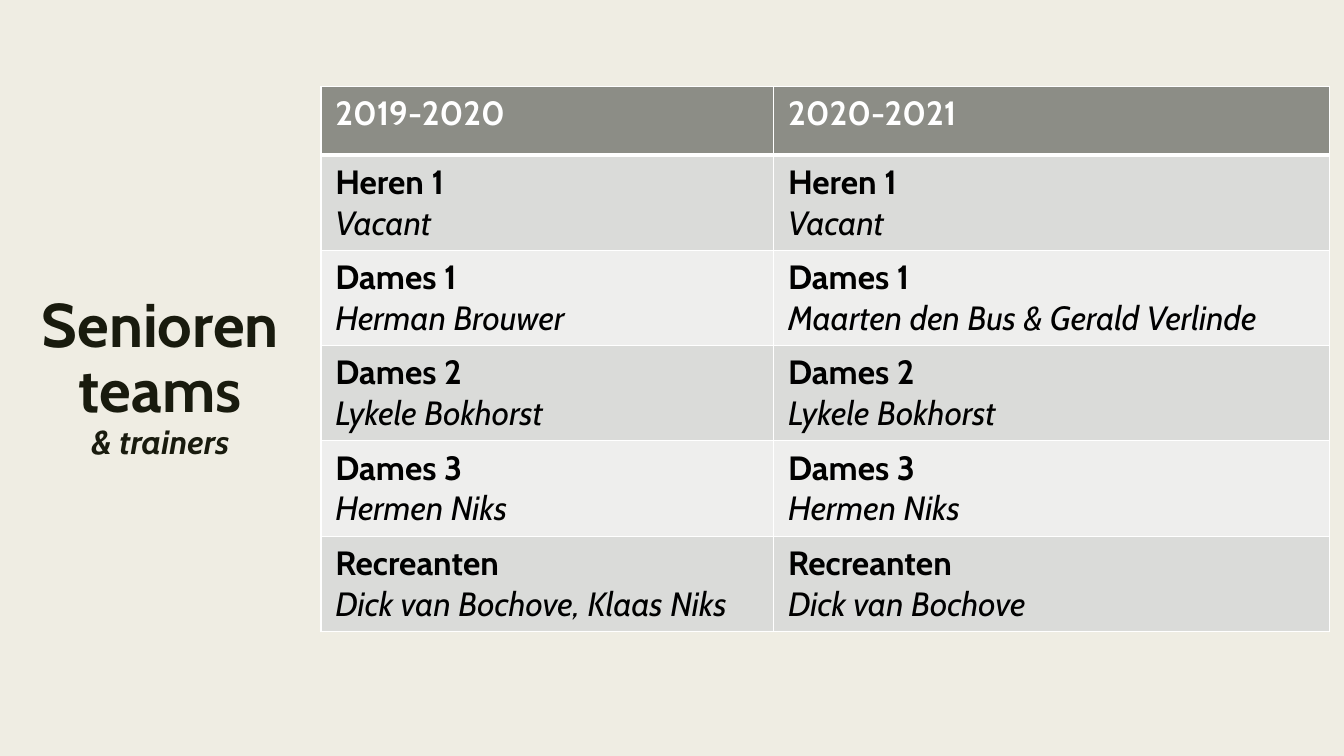
from lxml.etree import SubElement
from pptx import Presentation
from pptx.dml.color import RGBColor
from pptx.enum.shapes import MSO_SHAPE
from pptx.enum.text import MSO_ANCHOR, MSO_AUTO_SIZE, PP_ALIGN
from pptx.oxml.ns import qn
from pptx.util import Cm, Pt

COLORS = {
    "background": "EFEDE3",
    "title": "191B0E",
    "header": "8C8D86",
    "dark band": "DADBD9",
    "light band": "EEEEED",
    "white": "FFFFFF",
    "black": "000000",
}
SEASONS = ["2019-2020", "2020-2021"]
TEAMS = [
    ("Heren 1", "Vacant", "Vacant"),
    ("Dames 1", "Herman Brouwer", "Maarten den Bus & Gerald Verlinde"),
    ("Dames 2", "Lykele Bokhorst", "Lykele Bokhorst"),
    ("Dames 3", "Hermen Niks", "Hermen Niks"),
    ("Recreanten", "Dick van Bochove, Klaas Niks", "Dick van Bochove"),
]


def write(paragraph, text, size=24, color="black", bold=False, italic=False,
          align=PP_ALIGN.LEFT, spacing=1.0):
    paragraph.alignment = align
    paragraph.line_spacing = spacing
    run = paragraph.add_run()
    run.text = text
    run.font.name = "Cabin"
    run.font.size = Pt(size)
    run.font.bold = bold
    run.font.italic = italic
    run.font.color.rgb = RGBColor.from_string(COLORS[color])


def format_cell(cell, fill, bottom=1):
    """Set margins, white borders (widths in points) and fill, in schema order."""
    cell.margin_left = cell.margin_right = Cm(0.36)
    cell.margin_top = cell.margin_bottom = Cm(0.17)
    properties = cell._tc.get_or_add_tcPr()
    for side, width in (("L", 1), ("R", 1), ("T", 1), ("B", bottom)):
        line = SubElement(properties, qn(f"a:ln{side}"), w=str(Pt(width)))
        solid = SubElement(line, qn("a:solidFill"))
        SubElement(solid, qn("a:srgbClr"), val=COLORS["white"])
    cell.fill.solid()
    cell.fill.fore_color.rgb = RGBColor.from_string(COLORS[fill])


presentation = Presentation()
presentation.slide_width = Cm(33.87)
presentation.slide_height = Cm(19.05)
slide = presentation.slides.add_slide(presentation.slide_layouts[5])
slide.background.fill.solid()
slide.background.fill.fore_color.rgb = RGBColor.from_string(COLORS["background"])

backdrop = slide.shapes.add_shape(
    MSO_SHAPE.RECTANGLE, 0, 0, presentation.slide_width, presentation.slide_height)
backdrop.shadow.inherit = False
backdrop.fill.solid()
backdrop.fill.fore_color.rgb = RGBColor.from_string(COLORS["background"])
backdrop.line.fill.background()

title = slide.shapes.title
backdrop._element.addnext(title._element)
title.left, title.top, title.width, title.height = Cm(0.64), Cm(1.78), Cm(6.8), Cm(15.5)
title_frame = title.text_frame
title_frame.word_wrap = True
title_frame.auto_size = MSO_AUTO_SIZE.NONE
title_frame.vertical_anchor = MSO_ANCHOR.MIDDLE
title_format = dict(color="title", bold=True, align=PP_ALIGN.CENTER, spacing=0.89)
write(title_frame.paragraphs[0], "Senioren teams", size=44, **title_format)
title_frame.paragraphs[0].add_line_break()
write(title_frame.paragraphs[0], "& trainers", italic=True, **title_format)

table = slide.shapes.add_table(
    len(TEAMS) + 1, len(SEASONS), Cm(8.09), Cm(2.18), Cm(25.41), Cm(13.73)).table
table.columns[0].width = Cm(11.41)
table.columns[1].width = Cm(14)
table.rows[0].height = Cm(1.73)

for column, season in enumerate(SEASONS):
    cell = table.cell(0, column)
    format_cell(cell, "header", bottom=3)
    write(cell.text_frame.paragraphs[0], season, color="white", bold=True)

for row, (team, *trainers) in enumerate(TEAMS, start=1):
    table.rows[row].height = Cm(2.4)
    for column, trainer in enumerate(trainers):
        cell = table.cell(row, column)
        format_cell(cell, "dark band" if row % 2 else "light band")
        write(cell.text_frame.paragraphs[0], team, bold=True)
        write(cell.text_frame.add_paragraph(), trainer, italic=True)

presentation.save("out.pptx")
